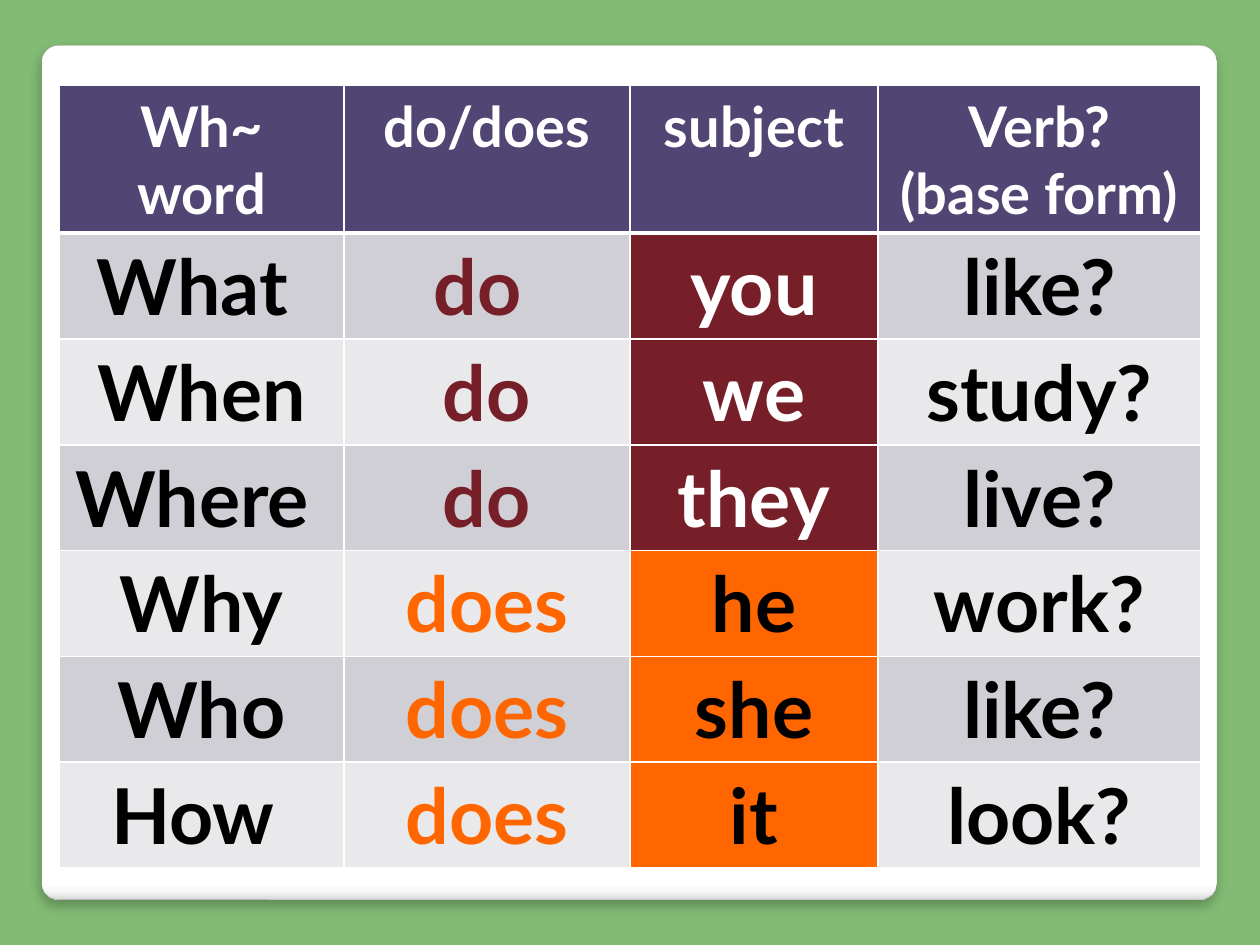
from lxml.etree import SubElement
from pptx import Presentation
from pptx.dml.color import RGBColor
from pptx.enum.shapes import MSO_SHAPE
from pptx.enum.text import PP_ALIGN
from pptx.oxml import parse_xml
from pptx.oxml.ns import nsdecls, qn
from pptx.util import Inches, Pt

COLORS = {
    "background": "82BB74", "outline": "A4A4A4", "header": "514573",
    "band_dark": "D0CFD5", "band_light": "E9E9EB",
    "maroon": "771F28", "orange": "FF6600",
    "white": "FFFFFF", "black": "000000",
}
PANEL_STOPS = [(0, "FFFFFF"), (98, "FFFFFF"), (99, "F7F7F7"), (100, "DADADA")]

HEADERS = ["Wh~ word", "do/does", "subject", "Verb?\n(base form)"]
QUESTIONS = [
    ("What ", "do ", "you", "like?"),
    ("When", "do", "we", "study?"),
    ("Where ", "do", "they", "live?"),
    ("Why", "does", "he", "work?"),
    ("Who", "does", "she", "like?"),
    ("How ", "does", "it", "look?"),
]
COLUMN_WIDTHS = [2.26, 2.27, 1.97, 2.56]
HEADER_HEIGHT, ROW_HEIGHT = 1.17, 0.84


def color(name):
    return RGBColor.from_string(COLORS[name])


class SlideBuilder:
    """Holds the slide and its text style."""

    font_name = "Lato"

    def __init__(self, slide):
        self.slide = slide

    def background(self, fill):
        self.slide.background.fill.solid()
        self.slide.background.fill.fore_color.rgb = color(fill)

    def panel(self, left, top, width, height):
        shape = self.slide.shapes.add_shape(
            MSO_SHAPE.ROUNDED_RECTANGLE,
            Inches(left), Inches(top), Inches(width), Inches(height))
        shape.adjustments[0] = 0.02
        shape.line.color.rgb = color("outline")
        shape.line.width = Pt(0.16)

        # Gradient that darkens only at the bottom edge
        shape.fill.gradient()
        shape.fill.gradient_angle = 270
        stop_list = shape.fill._fill._gradFill.find(qn("a:gsLst"))
        for stop in list(stop_list):
            stop_list.remove(stop)
        for position, value in PANEL_STOPS:
            stop = SubElement(stop_list, qn("a:gs"), pos=str(position * 1000))
            SubElement(stop, qn("a:srgbClr"), val=value)

        # Soft shadow below
        shape.shadow.inherit = False
        effects = shape._element.spPr.find(qn("a:effectLst"))
        effects.append(parse_xml(
            f'<a:outerShdw {nsdecls("a")} blurRad="{Pt(6)}" dist="{Pt(4)}" '
            'dir="5400000" algn="t" rotWithShape="0"><a:srgbClr val="000000">'
            '<a:alpha val="25000"/></a:srgbClr></a:outerShdw>'))

    def table(self, left, top, column_widths, row_heights):
        table = self.slide.shapes.add_table(
            len(row_heights), len(column_widths), Inches(left), Inches(top),
            Inches(sum(column_widths)), Inches(sum(row_heights))).table
        for column, width in zip(table.columns, column_widths):
            column.width = Inches(width)
        for row, height in zip(table.rows, row_heights):
            row.height = Inches(height)
        return table

    def cell(self, cell, text, size, text_color, fill, bottom_border=1):
        cell.text = text
        for paragraph in cell.text_frame.paragraphs:
            paragraph.alignment = PP_ALIGN.CENTER
            paragraph.font.name = self.font_name
            paragraph.font.size = Pt(size)
            paragraph.font.bold = True
            paragraph.font.color.rgb = color(text_color)
        # Borders come before the fill in the cell properties
        properties = cell._tc.get_or_add_tcPr()
        borders = {"lnL": 1, "lnR": 1, "lnT": 1, "lnB": bottom_border}
        for side, width in borders.items():
            line = SubElement(properties, qn(f"a:{side}"), w=str(Pt(width)))
            line_fill = SubElement(line, qn("a:solidFill"))
            SubElement(line_fill, qn("a:srgbClr"), val=COLORS["white"])
        cell.fill.solid()
        cell.fill.fore_color.rgb = color(fill)


def main():
    presentation = Presentation()
    presentation.slide_width = Inches(10)
    presentation.slide_height = Inches(7.5)
    builder = SlideBuilder(
        presentation.slides.add_slide(presentation.slide_layouts[6]))

    # Background and white panel
    builder.background("background")
    builder.panel(0.33, 0.36, 9.33, 6.78)

    # Header row
    table = builder.table(0.47, 0.68, COLUMN_WIDTHS,
                          [HEADER_HEIGHT] + [ROW_HEIGHT] * len(QUESTIONS))
    for column, text in enumerate(HEADERS):
        builder.cell(table.cell(0, column), text, 32, "white", "header",
                     bottom_border=3)

    # Question rows: the auxiliary and the subject share an accent
    for row, words in enumerate(QUESTIONS, start=1):
        band = "band_dark" if row % 2 else "band_light"
        if words[1].strip() == "do":
            accent, subject_color = "maroon", "white"
        else:
            accent, subject_color = "orange", "black"
        styles = [("black", band), (accent, band),
                  (subject_color, accent), ("black", band)]
        for column, (text, style) in enumerate(zip(words, styles)):
            builder.cell(table.cell(row, column), text, 44, *style,
                         )
            if row == 1:
                top_line = table.cell(row, column)._tc.tcPr.find(qn("a:lnT"))
                top_line.set("w", str(Pt(3)))

    presentation.save("out.pptx")


if __name__ == "__main__":
    main()
